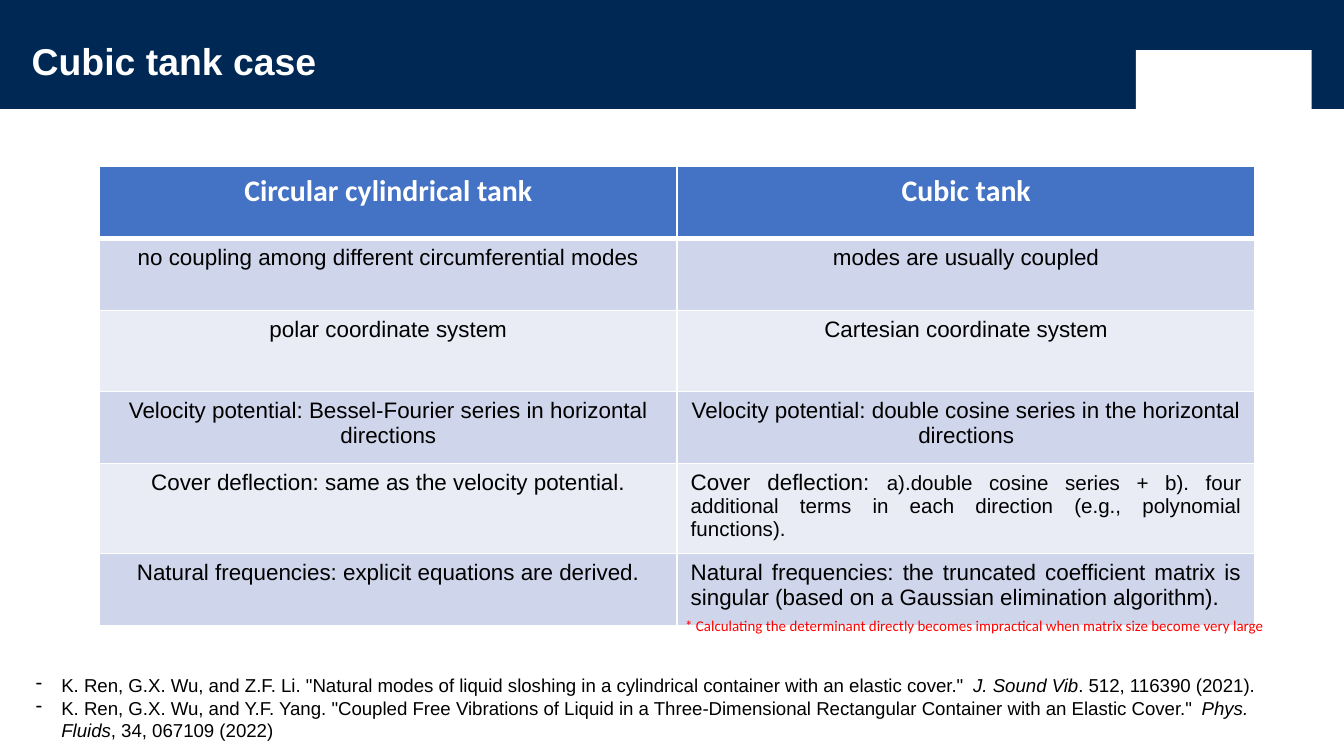
import pptx
import pptx.util
import pptx.dml.color
import pptx.enum.shapes
import pptx.enum.text
import pptx.oxml.ns
import lxml.etree

Cm = pptx.util.Cm
Pt = pptx.util.Pt
ALIGN = pptx.enum.text.PP_ALIGN

NAVY, WHITE, BLACK, RED = "002855", "FFFFFF", "000000", "FF0000"
HEAD, BANDS = "4472C4", ("CFD5EA", "E9EBF5")

HEADS = ("Circular cylindrical tank", "Cubic tank")
ROWS = [
    ("no coupling among different circumferential modes",
     "modes are usually coupled"),
    ("polar coordinate system", "Cartesian coordinate system"),
    ("Velocity potential: Bessel-Fourier series in horizontal directions",
     "Velocity potential: double cosine series in the horizontal directions"),
    ("Cover deflection: same as the velocity potential.",
     "Cover deflection: "),
    ("Natural frequencies: explicit equations are derived.",
     "Natural frequencies: the truncated coefficient matrix is singular "
     "(based on a Gaussian elimination algorithm)."),
]
TERMS = ("a).double cosine series + b). four additional terms in each "
         "direction (e.g., polynomial functions).")
HEIGHTS = (1.36, 1.36, 1.53, 1.36, 1.7, 1.36)
NOTE = ("* Calculating the determinant directly becomes impractical "
        "when matrix size become very large")
# Each reference: text before the journal, journal, text after it
REFS = [
    ('K. Ren, G.X. Wu, and Z.F. Li. "Natural modes of liquid sloshing in a '
     'cylindrical container with an elastic cover."  ',
     "J. Sound Vib", ". 512, 116390 (2021)."),
    ('K. Ren, G.X. Wu, and Y.F. Yang. "Coupled Free Vibrations of Liquid in a '
     'Three-Dimensional Rectangular Container with an Elastic Cover."  ',
     "Phys. Fluids", ", 34, 067109 (2022)"),
]


def color(code):
    return pptx.dml.color.RGBColor.from_string(code)


def style(run, size, code=BLACK, face="Arial", bold=False, italic=False):
    font = run.font
    font.size, font.name = Pt(size), face
    font.bold, font.italic = bold, italic
    font.color.rgb = color(code)


def add_rect(slide, box, code):
    kind = pptx.enum.shapes.MSO_SHAPE.RECTANGLE
    rect = slide.shapes.add_shape(kind, *map(Cm, box))
    rect.shadow.inherit = False
    rect.fill.solid()
    rect.fill.fore_color.rgb = color(code)
    rect.line.fill.background()


def add_frame(slide, box):
    frame = slide.shapes.add_textbox(*map(Cm, box)).text_frame
    frame.word_wrap = True
    return frame


def add_banner(slide, box):
    left, top, width, height = box
    add_rect(slide, box, NAVY)
    add_rect(slide, (left + width - 3.93, top + 0.95, 3.32, height - 0.95), WHITE)
    frame = add_frame(slide, (left + 0.6, top + 0.88, 5.84, 0.82))
    frame.margin_left = frame.margin_right = 0
    frame.margin_top = frame.margin_bottom = 0
    frame.text = "Cubic tank case"
    line = frame.paragraphs[0]
    line.line_spacing = 0.8
    style(line.runs[0], 20, WHITE, bold=True)


def add_edges(cell, base):
    """Draw white cell borders, with the bottom one base points wide."""
    props = cell._tc.get_or_add_tcPr()
    for side, size in (("L", 1), ("R", 1), ("T", 1), ("B", base)):
        edge = lxml.etree.SubElement(
            props, pptx.oxml.ns.qn("a:ln" + side), w=str(Pt(size)))
        fill = lxml.etree.SubElement(edge, pptx.oxml.ns.qn("a:solidFill"))
        lxml.etree.SubElement(fill, pptx.oxml.ns.qn("a:srgbClr"), val=WHITE)


def fill_cell(cell, text, row):
    add_edges(cell, 3 if row == 0 else 1)
    cell.fill.solid()
    cell.fill.fore_color.rgb = color(BANDS[(row - 1) % 2] if row else HEAD)
    cell.text_frame.text = text
    line = cell.text_frame.paragraphs[0]
    line.alignment = ALIGN.CENTER
    if row:
        style(line.runs[0], 12)
    else:
        style(line.runs[0], 16, WHITE, "Calibri", bold=True)


def add_grid(slide, box):
    cells = [HEADS] + ROWS
    grid = slide.shapes.add_table(len(cells), 2, *map(Cm, box)).table
    for row, texts in enumerate(cells):
        grid.rows[row].height = Cm(HEIGHTS[row])
        for col, text in enumerate(texts):
            fill_cell(grid.cell(row, col), text, row)
    for row in (4, 5):
        grid.cell(row, 1).text_frame.paragraphs[0].alignment = ALIGN.JUSTIFY
    run = grid.cell(4, 1).text_frame.paragraphs[0].add_run()
    run.text = TERMS
    style(run, 11)


def add_note(slide, box):
    frame = add_frame(slide, box)
    frame.text = NOTE
    style(frame.paragraphs[0].runs[0], 8, RED, "Calibri")


def add_dash(line):
    props = line._p.get_or_add_pPr()
    props.set("marL", str(Cm(0.48)))
    props.set("indent", str(-Cm(0.48)))
    lxml.etree.SubElement(props, pptx.oxml.ns.qn("a:buChar"), char="-")


def add_refs(slide, box):
    frame = add_frame(slide, box)
    for index, parts in enumerate(REFS):
        line = frame.add_paragraph() if index else frame.paragraphs[0]
        add_dash(line)
        for place, part in enumerate(parts):
            run = line.add_run()
            run.text = part
            style(run, 10, italic=place == 1)


def main():
    deck = pptx.Presentation()
    deck.slide_width, deck.slide_height = Cm(25.4), Cm(14.29)
    slide = deck.slides.add_slide(deck.slide_layouts[6])
    add_banner(slide, (0, 0, 25.4, 2.06))
    add_refs(slide, (0.43, 12.62, 24.38, 1.55))
    add_grid(slide, (1.88, 3.15, 21.84, sum(HEIGHTS)))
    add_note(slide, (12.7, 11.53, 11.51, 0.6))
    deck.save("out.pptx")


if __name__ == "__main__":
    main()
